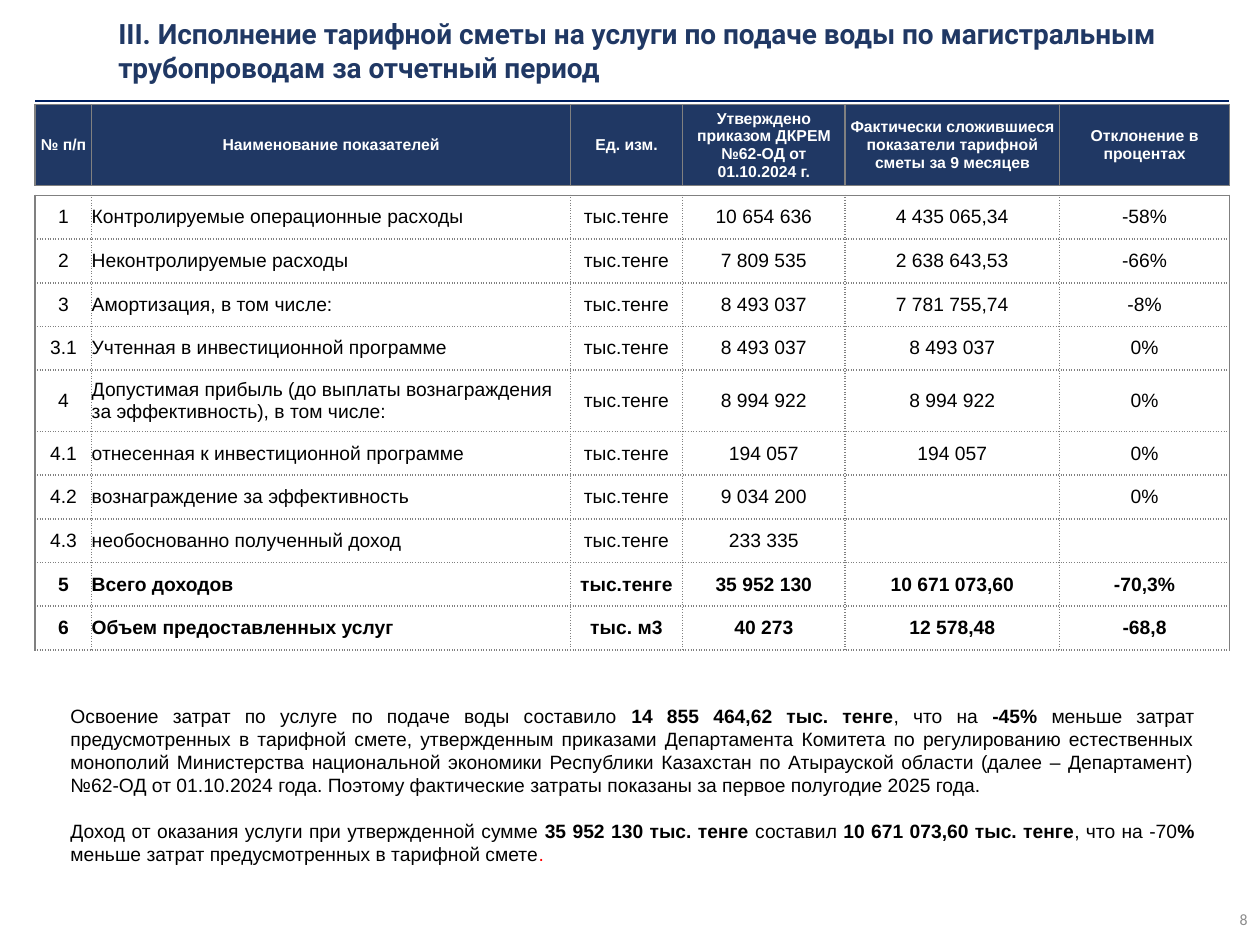
import pptx
import pptx.util
import pptx.dml.color
import pptx.enum.shapes
import pptx.enum.text
import pptx.oxml
import pptx.oxml.ns
from pptx.util import Cm, Pt

RGBColor = pptx.dml.color.RGBColor
Align = pptx.enum.text.PP_ALIGN
Anchor = pptx.enum.text.MSO_ANCHOR

NAVY = RGBColor(0x20, 0x38, 0x64)
RULE = RGBColor(0x00, 0x20, 0x60)
GREY = RGBColor(0x80, 0x80, 0x80)
PALE = RGBColor(0x8C, 0x8C, 0x8C)
BLACK = RGBColor(0, 0, 0)
WHITE = RGBColor(255, 255, 255)
RED = RGBColor(255, 0, 0)

LEFT = 0.71
COLS = [1.14, 9.65, 2.26, 3.28, 4.32, 3.43]
UNIT = "тыс.тенге"
HEAD = [
    "№ п/п", "Наименование показателей", "Ед. изм.",
    "Утверждено приказом ДКРЕМ №62-ОД от 01.10.2024 г.",
    "Фактически сложившиеся показатели тарифной сметы за 9 месяцев",
    "Отклонение в процентах",
]
ROWS = [
    ["1", "Контролируемые операционные расходы", UNIT, "10 654 636", "4 435 065,34", "-58%"],
    ["2", "Неконтролируемые расходы", UNIT, "7 809 535", "2 638 643,53", "-66%"],
    ["3", "Амортизация, в том числе:", UNIT, "8 493 037", "7 781 755,74", "-8%"],
    ["3.1", "Учтенная в инвестиционной программе", UNIT, "8 493 037", "8 493 037", "0%"],
    ["4", "Допустимая прибыль (до выплаты вознаграждения за эффективность), в том числе:",
     UNIT, "8 994 922", "8 994 922", "0%"],
    ["4.1", "отнесенная к инвестиционной программе", UNIT, "194 057", "194 057", "0%"],
    ["4.2", "вознаграждение за эффективность", UNIT, "9 034 200", "", "0%"],
    ["4.3", "необоснованно полученный доход", UNIT, "233 335", "", ""],
    ["5", "Всего доходов", UNIT, "35 952 130", "10 671 073,60", "-70,3%"],
    ["6", "Объем предоставленных услуг", "тыс. м3", "40 273", "12 578,48", "-68,8"],
]
NOTES = [
    [
        ("Освоение затрат по услуге по подаче воды составило ", False, BLACK),
        ("14 855 464,62 тыс. тенге", True, BLACK),
        (", что на ", False, BLACK),
        ("-45% ", True, BLACK),
        ("меньше затрат предусмотренных в тарифной смете, утвержденным приказами "
         "Департамента Комитета по регулированию естественных монополий Министерства "
         "национальной экономики Республики Казахстан по Атырауской области "
         "(далее – Департамент) №62-ОД от 01.10.2024 года. Поэтому фактические затраты "
         "показаны за первое полугодие 2025 года.", False, BLACK),
    ],
    [
        ("Доход от оказания услуги при утвержденной сумме ", False, BLACK),
        ("35 952 130 тыс. тенге ", True, BLACK),
        ("составил ", False, BLACK),
        ("10 671 073,60 тыс. тенге", True, BLACK),
        (", что на -70", False, BLACK),
        ("% ", True, BLACK),
        ("меньше затрат предусмотренных в тарифной смете", False, BLACK),
        (".", False, RED),
    ],
]


def style(run, size, color, bold=False, face="Arial"):
    font = run.font
    font.name, font.size, font.bold = face, Pt(size), bold
    font.color.rgb = color


def add_title(slide, text):
    title = slide.shapes.title
    title.left, title.top, title.width, title.height = Cm(2.13), Cm(0.36), Cm(22.68), Cm(1.3)
    frame = title.text_frame
    frame.text = text
    frame.vertical_anchor = Anchor.MIDDLE
    frame.auto_size = pptx.enum.text.MSO_AUTO_SIZE.NONE
    para = frame.paragraphs[0]
    para.alignment = Align.LEFT
    style(para.runs[0], 16, NAVY, True, "Roboto")


def add_rule(slide):
    line = slide.shapes.add_connector(
        pptx.enum.shapes.MSO_CONNECTOR.STRAIGHT, Cm(LEFT), Cm(2.03), Cm(24.77), Cm(2.03))
    line.line.color.rgb = RULE
    line.line.width = Pt(1)
    props = line._element.spPr
    props.append(pptx.oxml.parse_xml(f'<a:effectLst {pptx.oxml.ns.nsdecls("a")}/>'))


def add_edge(cell, side, dash):
    cell._tc.get_or_add_tcPr().append(pptx.oxml.parse_xml(
        f'<a:ln{side} {pptx.oxml.ns.nsdecls("a")} w="12700"><a:solidFill>'
        f'<a:srgbClr val="{GREY}"/></a:solidFill><a:prstDash val="{dash}"/></a:ln{side}>'))


def fill_cell(cell, text, size, color, back, bold, align, edges):
    for side, dash in edges.items():
        add_edge(cell, side, dash)
    cell.fill.solid()
    cell.fill.fore_color.rgb = back
    cell.margin_left = cell.margin_right = cell.margin_top = cell.margin_bottom = 0
    cell.vertical_anchor = Anchor.MIDDLE
    cell.text_frame.text = text
    para = cell.text_frame.paragraphs[0]
    para.alignment = align
    for run in para.runs:
        style(run, size, color, bold)


def add_grid(slide, top, highs, rows):
    frame = slide.shapes.add_table(
        len(rows), len(COLS), Cm(LEFT), Cm(top), Cm(sum(COLS)), Cm(sum(highs)))
    grid = frame.table
    grid.first_row = grid.horz_banding = False
    for col, wide in zip(grid.columns, COLS):
        col.width = Cm(wide)
    for row, high in zip(grid.rows, highs):
        row.height = Cm(high)
    return grid


def add_head(slide):
    grid = add_grid(slide, 2.11, [1.63], [HEAD])
    edges = dict.fromkeys("LRTB", "solid")
    for col, text in enumerate(HEAD):
        fill_cell(grid.cell(0, col), text, 9, WHITE, NAVY, True, Align.CENTER, edges)


def add_body(slide):
    highs = [1.24 if row[0] == "4" else 0.88 for row in ROWS]
    grid = add_grid(slide, 3.94, highs, ROWS)
    last = len(COLS) - 1
    for i, row in enumerate(ROWS):
        for j, text in enumerate(row):
            outer = {"L": j == 0, "R": j == last, "T": i == 0, "B": False}
            edges = {side: "solid" if out else "sysDot" for side, out in outer.items()}
            align = Align.LEFT if j == 1 else Align.CENTER
            fill_cell(grid.cell(i, j), text, 11, BLACK, WHITE, row[0] in "56", align, edges)


def add_box(slide, left, top, wide, high):
    frame = slide.shapes.add_textbox(Cm(left), Cm(top), Cm(wide), Cm(high)).text_frame
    frame.word_wrap = True
    return frame


def add_notes(slide):
    frame = add_box(slide, 1.17, 13.59, 23.16, 4.5)
    frame.margin_top = Cm(0.6)
    for i, parts in enumerate(NOTES):
        para = frame.add_paragraph() if i else frame.paragraphs[0]
        para.alignment = Align.JUSTIFY
        para.line_spacing = Pt(13.2)
        if i:
            para.space_before = Pt(13.2)
        for text, bold, color in parts:
            run = para.add_run()
            run.text = text
            style(run, 11, color, bold)


def add_page(slide, text):
    frame = add_box(slide, 19.69, 18.03, 5.71, 1.02)
    frame.vertical_anchor = Anchor.MIDDLE
    frame.text = text
    para = frame.paragraphs[0]
    para.alignment = Align.RIGHT
    style(para.runs[0], 9, PALE, face="Calibri")


def main():
    deck = pptx.Presentation()
    deck.slide_width, deck.slide_height = Cm(25.4), Cm(19.05)
    slide = deck.slides.add_slide(deck.slide_layouts[5])
    add_notes(slide)
    add_head(slide)
    add_body(slide)
    add_page(slide, "8")
    add_title(slide, "III. Исполнение тарифной сметы на услуги по подаче воды "
                     "по магистральным трубопроводам за отчетный период")
    add_rule(slide)
    deck.save("out.pptx")


if __name__ == "__main__":
    main()
